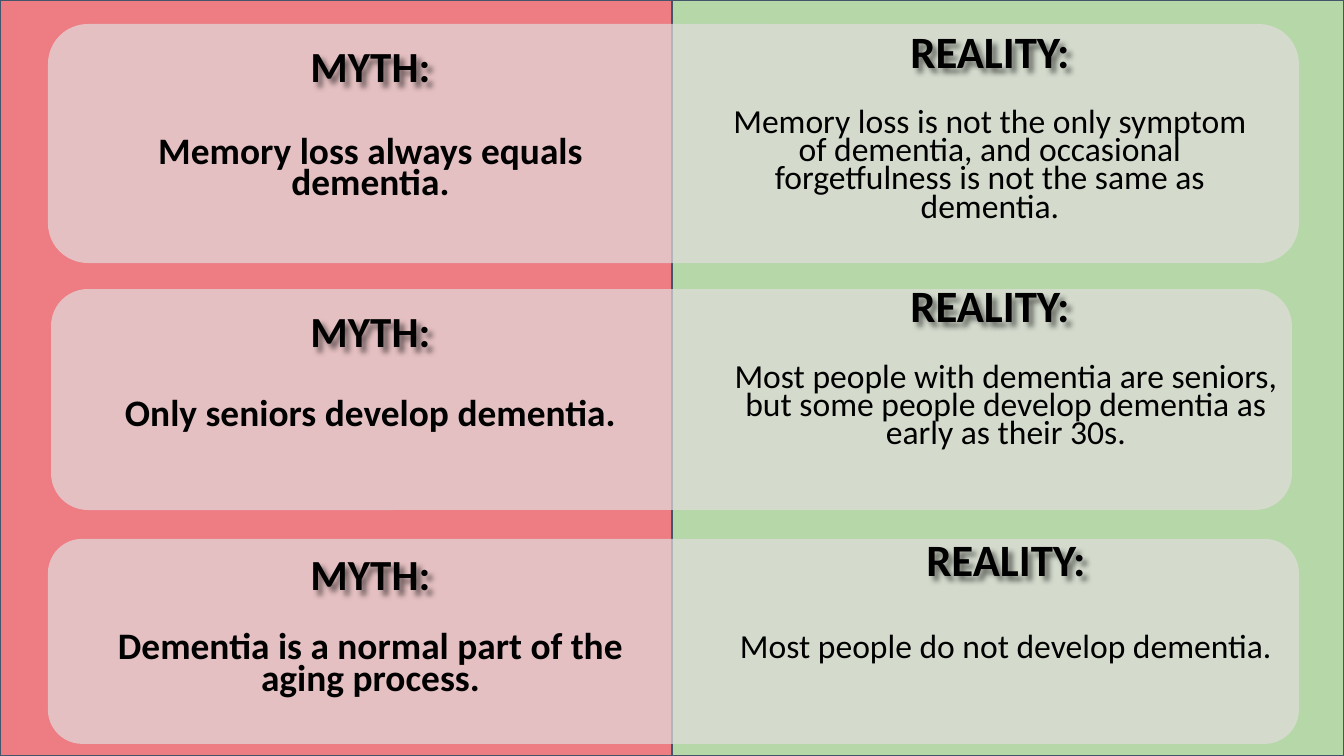
from lxml import etree
from pptx import Presentation
from pptx.dml.color import RGBColor
from pptx.enum.shapes import MSO_SHAPE
from pptx.enum.text import MSO_ANCHOR, PP_ALIGN
from pptx.oxml.ns import qn
from pptx.util import Emu, Pt

COLORS = {"myth": "ED7C83", "reality": "B6D7A8", "card": "E2DEDE",
          "border": "44546A", "text": "000000"}
FONT = "Calibri"
WIDTH, HEIGHT = 1344, 756
HALF = WIDTH // 2
MYTH_LEFT, MYTH_WIDTH = 102, 537
REALITY_WIDTH = 554

# card: left, top, width, height; tops are (heading, statement)
ROWS = [
    {"card": (48, 24, 1251, 239),
     "myth": "Memory loss always equals dementia.",
     "myth_tops": (44, 133),
     "reality": "Memory loss is not the only symptom of dementia, and "
                "occasional forgetfulness is not the same as dementia.",
     "reality_tops": (28, 105), "reality_left": 713, "extra_width": 0},
    {"card": (51, 289, 1241, 221),
     "myth": "Only seniors develop dementia.",
     "myth_tops": (309, 396),
     "reality": "Most people with dementia are seniors, but some people "
                "develop dementia as early as their 30s.",
     "reality_tops": (282, 360), "reality_left": 713, "extra_width": 32},
    {"card": (48, 539, 1251, 205),
     "myth": "Dementia is a normal part of the aging process.",
     "myth_tops": (552, 629),
     "reality": "Most people do not develop dementia.",
     "reality_tops": (536, 630), "reality_left": 729, "extra_width": 0},
]


def px(value):
    return Emu(round(value * 914400 / 134.4))


def color(name):
    return RGBColor.from_string(COLORS[name])


def add_block(slide, preset, box, fill):
    shape = slide.shapes.add_shape(preset, *map(px, box))
    shape.shadow.inherit = False
    shape.fill.solid()
    shape.fill.fore_color.rgb = color(fill)
    return shape


def add_half(slide, left, fill):
    half = add_block(slide, MSO_SHAPE.RECTANGLE, (left, 0, HALF, HEIGHT), fill)
    half.line.color.rgb = color("border")
    half.line.width = Pt(0.75)


def add_card(slide, box):
    card = add_block(slide, MSO_SHAPE.ROUNDED_RECTANGLE, box, "card")
    card.line.fill.background()
    fill_color = next(card.fill._xPr.iter(qn("a:srgbClr")))
    etree.SubElement(fill_color, qn("a:alpha"), val="70000")


def add_text(slide, text, box, size, bold, spacing):
    text_box = slide.shapes.add_textbox(*map(px, box))
    frame = text_box.text_frame
    frame.word_wrap = True
    frame.vertical_anchor = MSO_ANCHOR.TOP
    frame.margin_left = frame.margin_right = px(9)
    frame.margin_top = frame.margin_bottom = px(6)
    paragraph = frame.paragraphs[0]
    paragraph.text = text
    paragraph.alignment = PP_ALIGN.CENTER
    paragraph.line_spacing = spacing
    font = paragraph.font
    font.name, font.size, font.bold = FONT, Pt(size), bold
    font.color.rgb = color("text")
    return text_box


def add_heading(slide, text, box, size):
    heading = add_text(slide, text, box, size, True, 0.8)
    effects = etree.SubElement(heading._element.spPr, qn("a:effectLst"))
    shadow = etree.SubElement(effects, qn("a:outerShdw"), blurRad="38100",
                              dist="38100", dir="2700000", algn="tl")
    shadow_color = etree.SubElement(shadow, qn("a:srgbClr"), val=COLORS["text"])
    etree.SubElement(shadow_color, qn("a:alpha"), val="50000")


def main():
    presentation = Presentation()
    presentation.slide_width, presentation.slide_height = px(WIDTH), px(HEIGHT)
    slide = presentation.slides.add_slide(presentation.slide_layouts[6])

    add_half(slide, HALF, "reality")
    add_half(slide, 0, "myth")
    for row in ROWS:
        add_card(slide, row["card"])
        heading_top, text_top = row["myth_tops"]
        add_heading(slide, "MYTH:", (MYTH_LEFT, heading_top, MYTH_WIDTH, 68), 23)
        add_text(slide, row["myth"], (MYTH_LEFT, text_top, MYTH_WIDTH, 80),
                 20, True, 0.7)
        heading_top, text_top = row["reality_tops"]
        left = row["reality_left"]
        add_heading(slide, "REALITY:", (left, heading_top, REALITY_WIDTH, 68), 24)
        add_text(slide, row["reality"],
                 (left, text_top, REALITY_WIDTH + row["extra_width"], 124),
                 18, False, 0.7)
    presentation.save("out.pptx")


if __name__ == "__main__":
    main()
